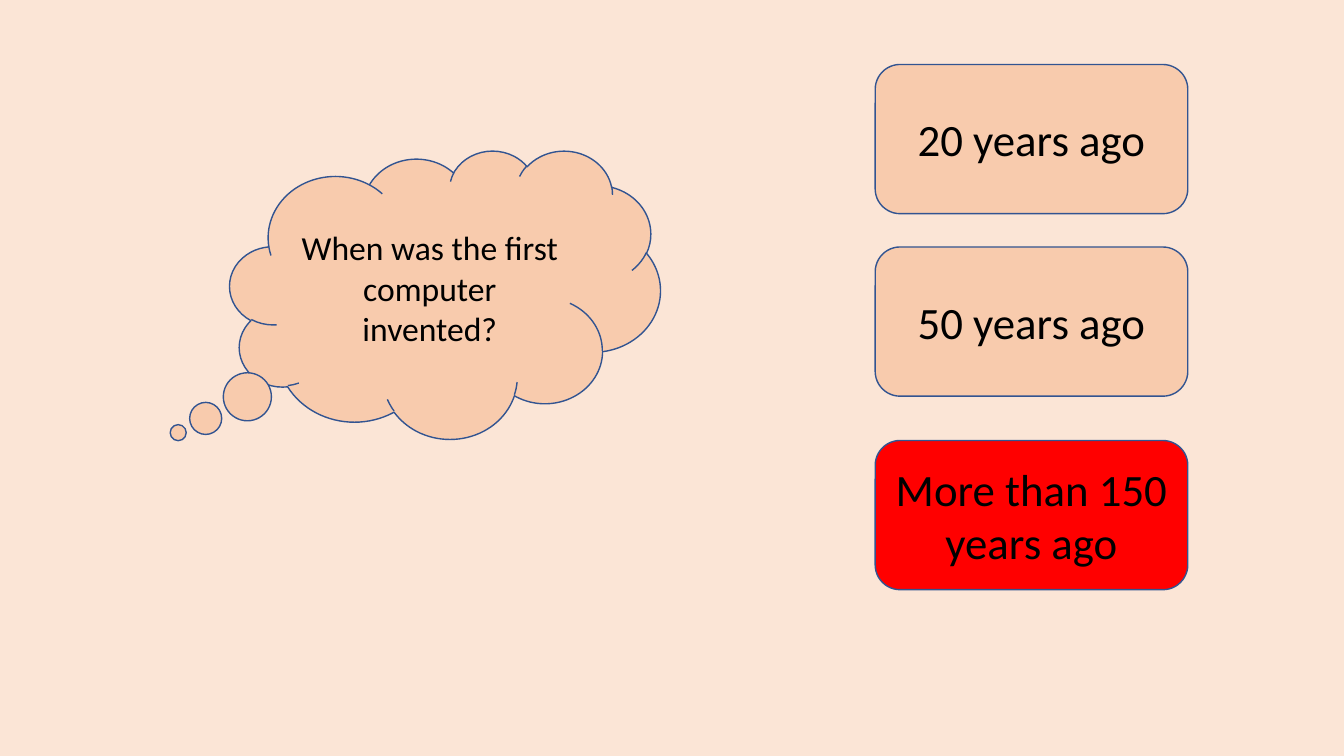
from pptx import Presentation
from pptx import util as u
from pptx.dml import color
from pptx.enum import shapes, text

COLORS = {
    "background": "FBE5D6",
    "peach": "F8CBAD",
    "answer": "FF0000",
    "outline": "325491",
    "ink": "000000",
}


class QuizSlide:
    """Holds the style and the current slide; lengths are percent of its size."""

    def __init__(self, deck):
        self.deck = deck
        self.page = deck.slides.add_slide(deck.slide_layouts[6])
        self.paint(self.page.background.fill, "background")

    def paint(self, fill, name):
        fill.solid()
        fill.fore_color.rgb = color.RGBColor.from_string(COLORS[name])

    def place(self, left, top, width, height):
        across, down = self.deck.slide_width / 100, self.deck.slide_height / 100
        return [int(left * across), int(top * down),
                int(width * across), int(height * down)]

    def box(self, kind, area, words, size, fill="peach"):
        box = self.page.shapes.add_shape(kind, *self.place(*area))
        box.shadow.inherit = False
        self.paint(box.fill, fill)
        self.paint(box.line.fill, "outline")
        box.line.width = u.Pt(1)
        frame = box.text_frame
        frame.word_wrap = True
        frame.vertical_anchor = text.MSO_ANCHOR.MIDDLE
        para = frame.paragraphs[0]
        para.alignment = text.PP_ALIGN.CENTER
        span = para.add_run()
        span.text = words
        for key, value in {"name": "Calibri", "size": u.Pt(size)}.items():
            setattr(span.font, key, value)
        self.paint(span.font.fill, "ink")
        return box

    def thought(self, area, words, tail):
        cloud = self.box(shapes.MSO_SHAPE.CLOUD_CALLOUT, area, words, 24)
        for index, offset in enumerate(tail):
            cloud.adjustments[index] = offset

    def choice(self, top, words, fill):
        area = (65.12, top, 23.26, 19.73)
        self.box(shapes.MSO_SHAPE.ROUNDED_RECTANGLE, area, words, 32, fill)


def main():
    deck = Presentation()
    deck.slide_width, deck.slide_height = u.Inches(13.33), u.Inches(7.5)
    quiz = QuizSlide(deck)

    # Question
    quiz.thought((17.1, 19.87, 32.03, 38.13),
                 "When was the first computer invented?", (-0.62, 0.48))

    # Choices, with the right one in red
    for top, words, fill in (
        (8.53, "20 years ago", "peach"),
        (32.67, "50 years ago", "peach"),
        (58.27, "More than 150 years ago", "answer"),
    ):
        quiz.choice(top, words, fill)

    deck.save("out.pptx")


if __name__ == "__main__":
    main()
